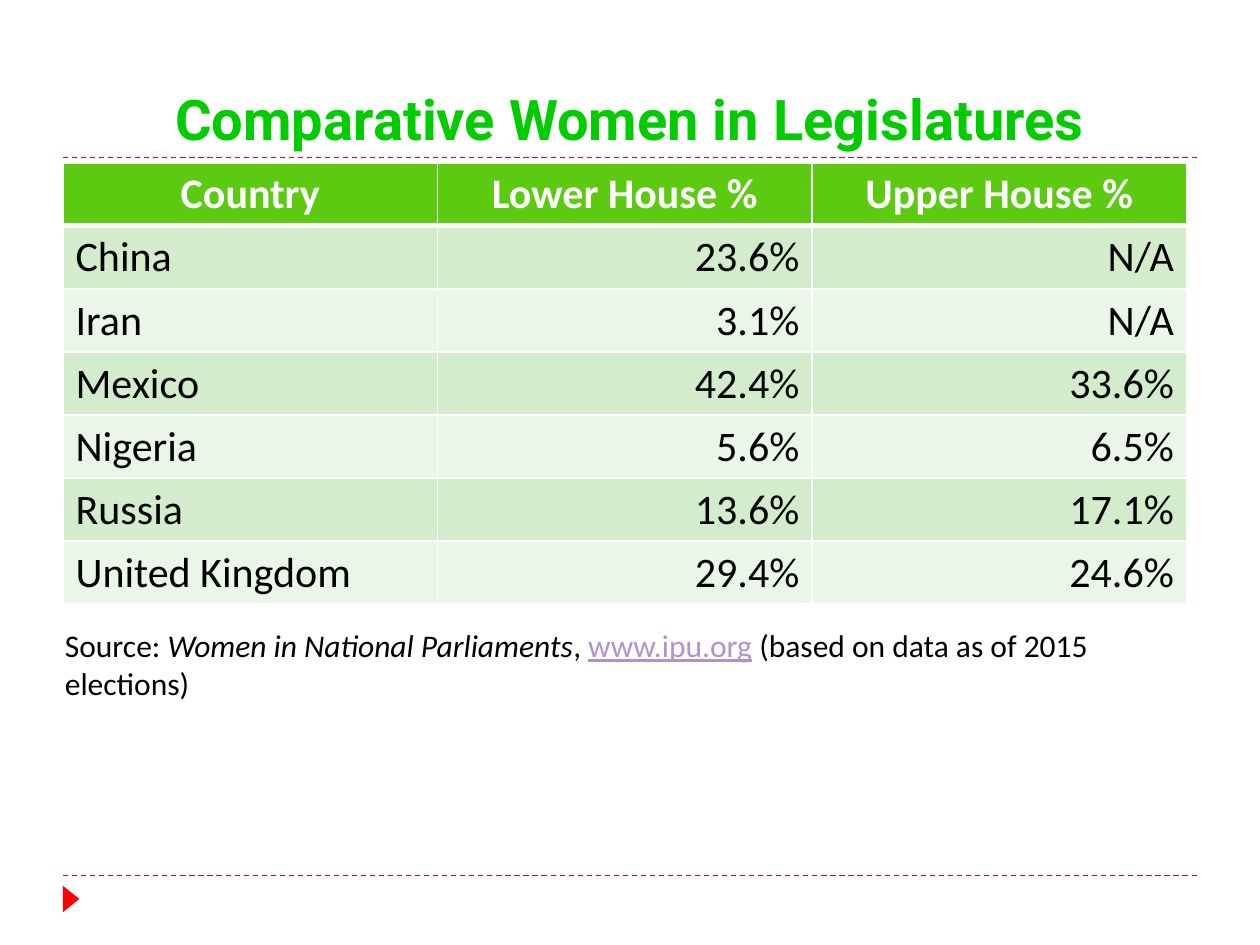
from lxml.etree import SubElement
from pptx import Presentation
from pptx.dml.color import RGBColor
from pptx.enum.dml import MSO_LINE
from pptx.enum.shapes import MSO_CONNECTOR, MSO_SHAPE
from pptx.enum.text import MSO_ANCHOR, PP_ALIGN
from pptx.oxml.ns import qn
from pptx.util import Pt

HEADERS = ["Country", "Lower House %", "Upper House %"]
ROWS = [
    ["China", "23.6%", "N/A"],
    ["Iran", "3.1%", "N/A"],
    ["Mexico", "42.4%", "33.6%"],
    ["Nigeria", "5.6%", "6.5%"],
    ["Russia", "13.6%", "17.1%"],
    ["United Kingdom", "29.4%", "24.6%"],
]


def rgb(color):
    return RGBColor.from_string(color)


class LegislatureSlide:
    RED, GREEN, WHITE, BLACK = "FF0000", "00CC00", "FFFFFF", "000000"
    HEADER, BANDS, LINK = "5BCA10", ("D2ECCC", "EAF6E7"), "B292CA"
    HEAD_FONT, BODY_FONT = "Roboto", "Calibri"

    def __init__(self, prs):
        self.s = prs.slides.add_slide(prs.slide_layouts[6])

    def run(self, p, text, size, color=BLACK, font=BODY_FONT,
            bold=False, italic=False, underline=False):
        r = p.add_run()
        r.text = text
        f = r.font
        f.size, f.name, f.color.rgb = Pt(size), font, rgb(color)
        f.bold, f.italic, f.underline = bold, italic, underline

    def rule(self, x1, x2, y):
        sp = self.s.shapes.add_connector(
            MSO_CONNECTOR.STRAIGHT, Pt(x1), Pt(y), Pt(x2), Pt(y))
        sp.line.color.rgb = rgb(self.RED)
        sp.line.width = Pt(0.75)
        sp.line.dash_style = MSO_LINE.DASH
        SubElement(sp._element.spPr, qn("a:effectLst"))

    def marker(self, x, y, w, h):
        sp = self.s.shapes.add_shape(
            MSO_SHAPE.ISOSCELES_TRIANGLE, Pt(x), Pt(y), Pt(w), Pt(h))
        sp.rotation = 90
        sp.shadow.inherit = False
        sp.fill.solid()
        sp.fill.fore_color.rgb = rgb(self.RED)
        sp.line.fill.background()

    def text(self, x, y, w, h, runs, size, align=PP_ALIGN.LEFT, anchor=MSO_ANCHOR.TOP):
        """Add a one-paragraph box; runs are (text, font options) pairs."""
        sp = self.s.shapes.add_textbox(Pt(x), Pt(y), Pt(w), Pt(h))
        tf = sp.text_frame
        tf.word_wrap, tf.vertical_anchor = True, anchor
        p = tf.paragraphs[0]
        p.alignment = align
        for text, options in runs:
            self.run(p, text, size, **options)

    def cell(self, cell, text, fill, align, bottom=1, **font):
        tc_pr = cell._tc.get_or_add_tcPr()
        for side, width in zip("LRTB", (1, 1, 1, bottom)):
            ln = SubElement(tc_pr, qn(f"a:ln{side}"), w=str(Pt(width)))
            solid = SubElement(ln, qn("a:solidFill"))
            SubElement(solid, qn("a:srgbClr"), val=self.WHITE)
        cell.fill.solid()
        cell.fill.fore_color.rgb = rgb(fill)
        p = cell.text_frame.paragraphs[0]
        p.alignment = align
        self.run(p, text, 24, **font)

    def table(self, x, y, w, row_h, headers, rows):
        n_rows = len(rows) + 1
        table = self.s.shapes.add_table(
            n_rows, len(headers), Pt(x), Pt(y), Pt(w), Pt(row_h * n_rows)).table
        for col in table.columns:
            col.width = Pt(w / len(headers))
        for j, text in enumerate(headers):
            self.cell(table.cell(0, j), text, self.HEADER, PP_ALIGN.CENTER,
                      bottom=3, color=self.WHITE, bold=True)
        for i, row in enumerate(rows):
            for j, text in enumerate(row):
                align = PP_ALIGN.RIGHT if j else PP_ALIGN.LEFT
                self.cell(table.cell(i + 1, j), text, self.BANDS[i % 2], align)


def main():
    prs = Presentation()
    prs.slide_width, prs.slide_height = Pt(720), Pt(540)
    slide = LegislatureSlide(prs)
    for y in (500.4, 90):
        slide.rule(36, 684, y)
    slide.marker(33.1, 509, 15.1, 9.4)
    title = {"color": slide.GREEN, "font": slide.HEAD_FONT, "bold": True}
    slide.text(36, 12.2, 648, 77.8, [("Comparative Women in Legislatures", title)],
               32, PP_ALIGN.CENTER, MSO_ANCHOR.BOTTOM)
    slide.table(36, 93, 642, 36, HEADERS, ROWS)
    slide.text(30, 354.2, 660, 72.7, [
        ("Source: ", {}),
        ("Women in National Parliaments", {"italic": True}),
        (", ", {}),
        ("www.ipu.org", {"color": slide.LINK, "underline": True}),
        (" (based on data as of 2015 elections)", {}),
    ], 18)
    prs.save("out.pptx")


if __name__ == "__main__":
    main()
